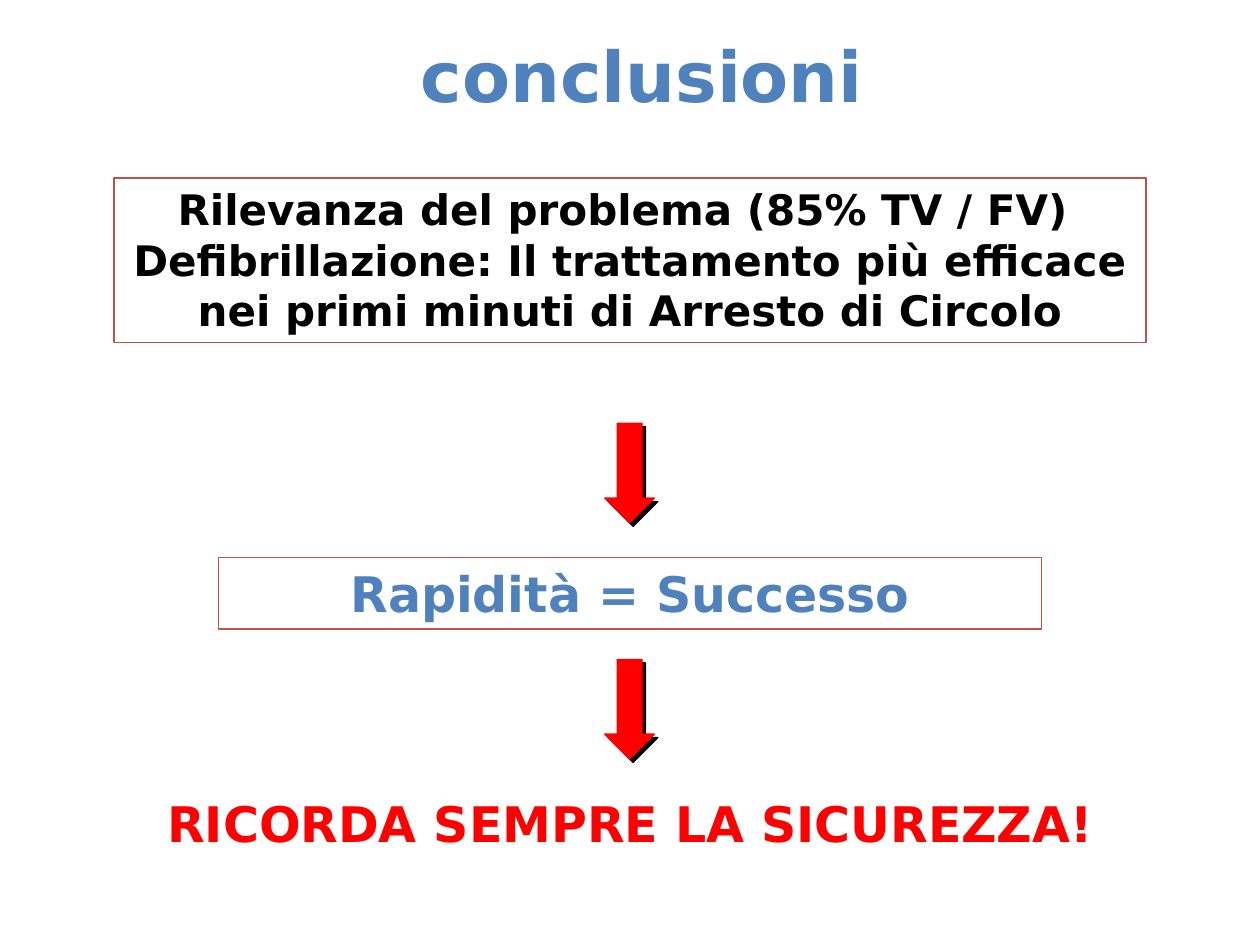
import pptx
import pptx.dml.color
import pptx.enum.shapes
import pptx.enum.text
import pptx.oxml
import pptx.oxml.ns
import pptx.util
from dataclasses import dataclass

Pt = pptx.util.Pt


@dataclass(frozen=True)
class Theme:
    font: str = "DejaVu Sans"
    black: str = "000000"
    blue: str = "4F81BD"
    red: str = "FF0000"
    border: str = "C0504D"
    title_size: float = 40
    body_size: float = 24
    key_size: float = 28


class SlideBuilder:
    def __init__(self, page, theme):
        self.page = page
        self.theme = theme

    def color(self, value):
        return pptx.dml.color.RGBColor.from_string(value)

    def text(self, area, lines, size, color, border_width=None):
        """Centred bold text, with a thin frame when border_width is given."""
        box = self.page.shapes.add_textbox(*map(Pt, area))
        if border_width:
            box.line.color.rgb = self.color(self.theme.border)
            box.line.width = Pt(border_width)
        frame = box.text_frame
        frame.word_wrap = True
        frame.auto_size = pptx.enum.text.MSO_AUTO_SIZE.SHAPE_TO_FIT_TEXT
        frame.text = "\n".join(lines)
        for para in frame.paragraphs:
            para.alignment = pptx.enum.text.PP_ALIGN.CENTER
            para.font.name = self.theme.font
            para.font.size = Pt(size)
            para.font.bold = True
            para.font.color.rgb = self.color(color)

    def down_arrow(self, area):
        """Solid arrow with a hard shadow towards the lower right."""
        arrow = self.page.shapes.add_shape(
            pptx.enum.shapes.MSO_SHAPE.DOWN_ARROW, *map(Pt, area))
        arrow.adjustments[0] = 0.5
        arrow.adjustments[1] = 0.5
        arrow.fill.solid()
        arrow.fill.fore_color.rgb = self.color(self.theme.red)
        arrow.line.color.rgb = self.color(self.theme.red)
        arrow.line.width = Pt(0.75)
        arrow.shadow.inherit = False
        effects = arrow.fill._xPr.find(pptx.oxml.ns.qn("a:effectLst"))
        effects.append(pptx.oxml.parse_xml(
            f'<a:outerShdw {pptx.oxml.ns.nsdecls("a")} dist="{Pt(2.8)}" '
            f'dir="{45 * 60000}" algn="ctr" rotWithShape="0">'
            f'<a:srgbClr val="{self.theme.black}"/></a:outerShdw>'))


def main():
    deck = pptx.Presentation()
    deck.slide_width, deck.slide_height = Pt(720), Pt(540)
    theme = Theme()
    page = SlideBuilder(deck.slides.add_slide(deck.slide_layouts[6]), theme)

    # Title
    page.text((161.3, 15.1, 411, 55.4), ["conclusioni"],
              theme.title_size, theme.blue)

    # Framed statements
    page.text((65, 101.5, 590, 94.3),
              ["Rilevanza del problema (85% TV / FV) ",
               "Defibrillazione: Il trattamento più efficace "
               "nei primi minuti di Arresto di Circolo"],
              theme.body_size, theme.black, border_width=1)
    page.text((124.8, 318.5, 470.2, 41), ["Rapidità = Successo"],
              theme.key_size, theme.blue, border_width=0.75)

    # Closing reminder
    page.text((65, 450, 590, 41), ["RICORDA SEMPRE LA SICUREZZA!"],
              theme.key_size, theme.red)

    # Arrows between the steps
    for top in (241.9, 376.8):
        page.down_arrow((345.6, top, 28.4, 56.9))

    deck.save("out.pptx")


if __name__ == "__main__":
    main()
